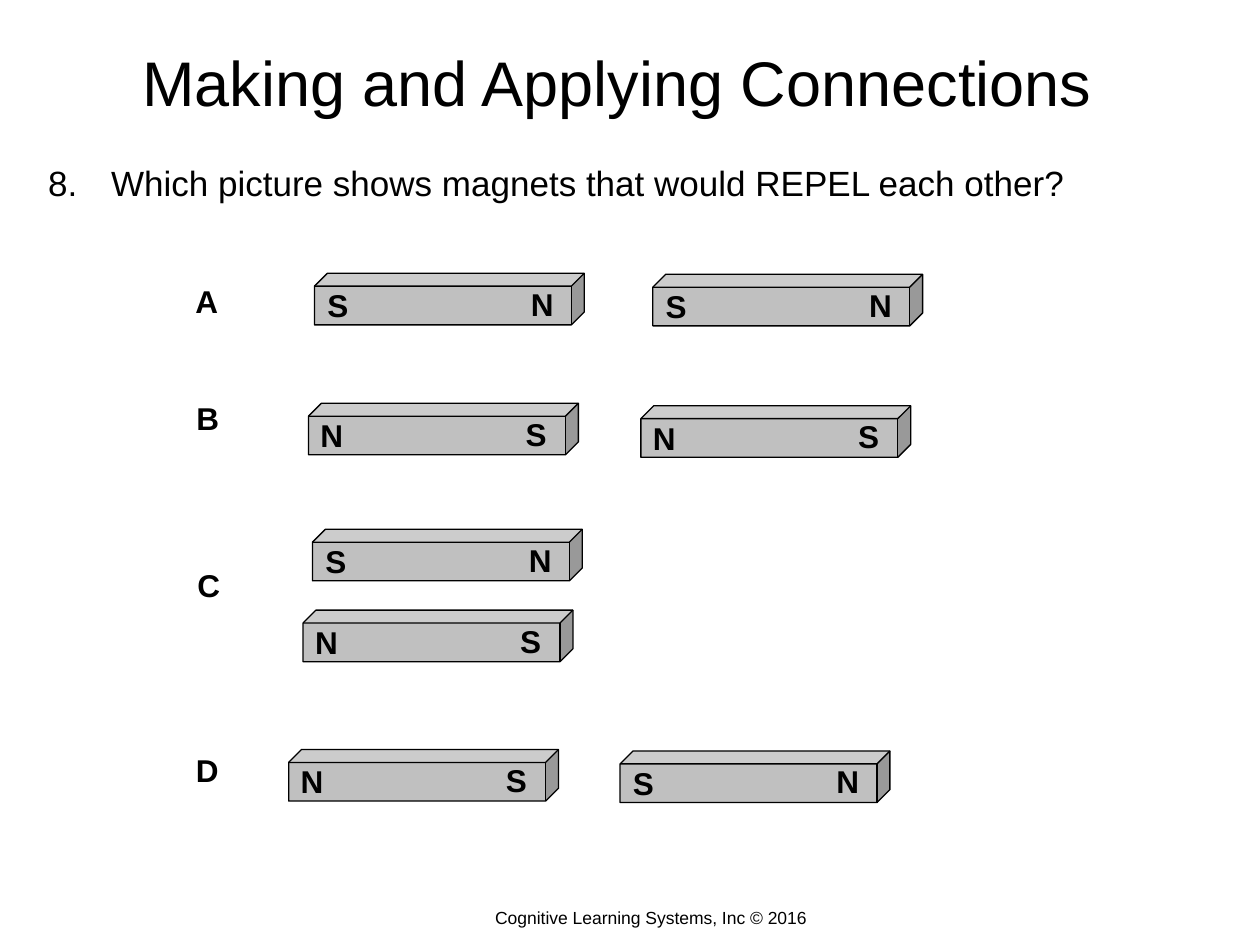
import pptx
import pptx.dml.color
import pptx.enum.text
import pptx.oxml.ns
import pptx.util
from pptx.util import Cm
from lxml import etree

COLORS = {"ink": "000000", "steel": "C0C0C0", "light": "FFFFFF"}
ALIGN = pptx.enum.text.PP_ALIGN
ANCHOR = pptx.enum.text.MSO_ANCHOR
WIDE, HIGH, DEEP = 5.44, 1.04, 0.26  # magnet size in cm

# Answer: label spot, then magnets as (left, top, poles), all in cm
ROWS = {
    "A": ((3.81, 5.56), [(6.34, 5.51, "SN"), (13.16, 5.53, "SN")]),
    "B": ((3.83, 7.92), [(6.22, 8.13, "NS"), (12.92, 8.18, "NS")]),
    "C": ((3.85, 11.28), [(6.3, 10.67, "SN"), (6.11, 12.3, "NS")]),
    "D": ((3.82, 15.01), [(5.82, 15.11, "NS"), (12.5, 15.14, "SN")]),
}


def color(name):
    return pptx.dml.color.RGBColor.from_string(COLORS[name])


def style(box, text, size, bold=False, align=ALIGN.LEFT, anchor=ANCHOR.TOP, wrap=True):
    """Fill a box with one line of text and format it."""
    frame = box.text_frame
    frame.text = text
    frame.word_wrap = wrap
    frame.auto_size = pptx.enum.text.MSO_AUTO_SIZE.SHAPE_TO_FIT_TEXT
    frame.vertical_anchor = anchor
    frame.margin_left = frame.margin_right = Cm(0.13)
    frame.margin_top = frame.margin_bottom = Cm(0.13)
    para = frame.paragraphs[0]
    para.alignment = align
    font = para.runs[0].font
    font.name, font.size, font.bold = "Arial", pptx.util.Pt(size), bold
    font.color.rgb = color("ink")


def add_text(shapes, text, place, size, **look):
    box = shapes.add_textbox(*map(Cm, place))
    style(box, text, size, **look)
    return box


def add_title(slide, text):
    title = slide.shapes.title
    title.left, title.top, title.width, title.height = map(Cm, (2.74, 0.74, 19.89, 1.7))
    style(title, text, 36)


def number(para, start):
    """Turn a paragraph into a numbered item with a hanging indent."""
    props = para._p.get_or_add_pPr()
    props.set("marL", str(Cm(1.27)))
    props.set("indent", str(-Cm(1.27)))
    mark = etree.SubElement(props, pptx.oxml.ns.qn("a:buAutoNum"))
    mark.set("type", "arabicPeriod")
    mark.set("startAt", str(start))


def add_path(shapes, closed, *strokes):
    """Draw a closed outline, plus open strokes, through points in cm."""
    first, *rest = [(Cm(x), Cm(y)) for x, y in closed]
    pen = shapes.build_freeform(*first, scale=1.0)
    pen.add_line_segments(rest, close=True)
    for stroke in strokes:
        first, *rest = [(Cm(x), Cm(y)) for x, y in stroke]
        pen.move_to(*first)
        pen.add_line_segments(rest, close=False)
    shape = pen.convert_to_shape()
    shape.shadow.inherit = False
    return shape


def add_face(shapes, points, tint, alpha=100):
    face = add_path(shapes, points)
    face.line.fill.background()
    face.fill.solid()
    face.fill.fore_color.rgb = color(tint)
    if alpha < 100:
        tone = face.fill._xPr.find(".//" + pptx.oxml.ns.qn("a:srgbClr"))
        etree.SubElement(tone, pptx.oxml.ns.qn("a:alpha")).set("val", str(alpha * 1000))


def add_bar(shapes, left, top):
    """Draw a block: body, shaded side, lit lid and edges."""
    right, base = left + WIDE, top + HIGH
    fold, edge = right - DEEP, top + DEEP
    near, corner, foot = (left, edge), (fold, edge), (fold, base)
    back, far, low = (left + DEEP, top), (right, top), (right, base - DEEP)
    body = [near, back, far, low, foot, (left, base)]
    add_face(shapes, body, "steel")
    add_face(shapes, [corner, far, low, foot], "ink", 20)
    add_face(shapes, [near, back, far, corner], "light", 20)
    edges = add_path(shapes, body, [near, corner, far], [corner, foot])
    edges.fill.background()
    edges.line.color.rgb = color("ink")
    edges.line.width = pptx.util.Pt(0.75)


def add_magnet(slide, left, top, poles):
    group = slide.shapes.add_group_shape().shapes
    add_bar(group, left, top)
    for pole, (right, down) in zip(poles, [(-0.28, 0.13), (3.84, 0.1)]):
        place = (left + right, top + down, 1.5, 0.97)
        add_text(group, pole, place, 18, bold=True, align=ALIGN.CENTER)


def main():
    deck = pptx.Presentation()
    deck.slide_width, deck.slide_height = Cm(25.4), Cm(19.05)
    slide = deck.slides.add_slide(deck.slide_layouts[5])
    add_title(slide, "Making and Applying Connections")
    ask = add_text(slide.shapes, "Which picture shows magnets that would REPEL each other?",
                   (0.84, 3.12, 24.56, 1.04), 20)
    number(ask.text_frame.paragraphs[0], 8)
    for label, (spot, magnets) in ROWS.items():
        for magnet in magnets:
            add_magnet(slide, *magnet)
        add_text(slide.shapes, label, (*spot, 1.73, 0.97), 18, bold=True)
    add_text(slide.shapes, "Cognitive Learning Systems, Inc © 2016",
             (9.83, 18.17, 6.58, 0.64), 10, align=ALIGN.CENTER,
             anchor=ANCHOR.MIDDLE, wrap=False)
    deck.save("out.pptx")


if __name__ == "__main__":
    main()
